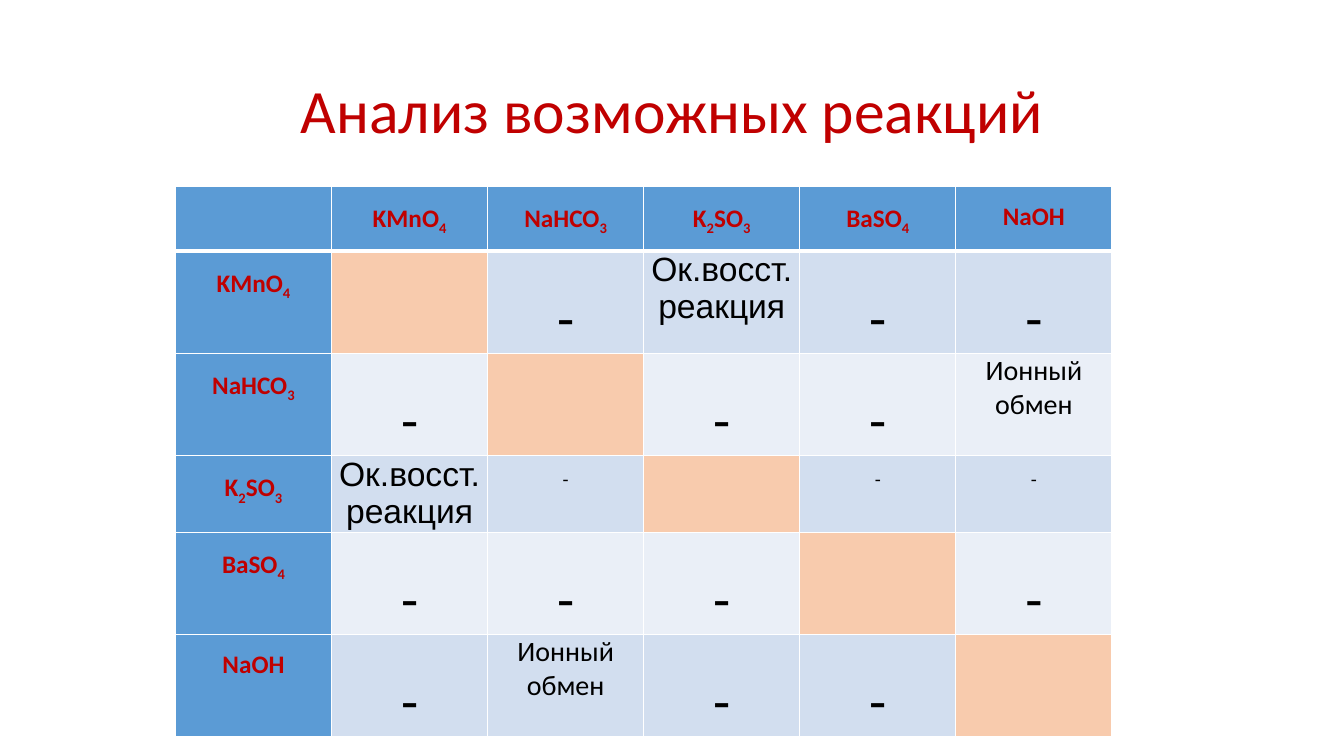
import dataclasses
import itertools

import lxml.etree
import pptx
import pptx.dml.color
import pptx.enum.text
import pptx.oxml.ns
import pptx.util

Inches = pptx.util.Inches
Pt = pptx.util.Pt


@dataclasses.dataclass(frozen=True)
class Theme:
    font: str = "Calibri"
    reaction_font: str = "Arial"
    accent: str = "C00000"
    text: str = "000000"
    header: str = "5B9BD5"
    diagonal: str = "F8CBAD"
    bands: tuple = ("EAEFF7", "D2DEEF")
    border: str = "FFFFFF"
    title_size: int = 44
    label_size: int = 18
    dash_size: int = 40
    small_dash_size: int = 14
    redox_size: int = 24
    exchange_size: int = 20


THEME = Theme()
SUBSTANCES = ["KMnO4", "NaHCO3", "K2SO3", "BaSO4", "NaOH"]
REDOX = {"KMnO4", "K2SO3"}
EXCHANGE = {"NaHCO3", "NaOH"}
ROW_HEIGHTS = [0.64, 0.85, 0.85, 0.76, 0.85, 0.85]


def style_run(r, size, color, font=THEME.font, bold=False):
    r.font.name = font
    r.font.size = Pt(size)
    r.font.bold = bold
    r.font.color.rgb = pptx.dml.color.RGBColor.from_string(color)


def style_paragraph(p, spacing=None):
    p.alignment = pptx.enum.text.PP_ALIGN.CENTER
    p.line_spacing = spacing


def set_borders(cell, row):
    tcPr = cell._tc.get_or_add_tcPr()
    thick = {"T": row == 1, "B": row == 0}
    for side in "LRTB":
        width = Pt(3 if thick.get(side) else 1)
        ln = lxml.etree.SubElement(tcPr, pptx.oxml.ns.qn(f"a:ln{side}"), w=str(width))
        fill = lxml.etree.SubElement(ln, pptx.oxml.ns.qn("a:solidFill"))
        lxml.etree.SubElement(fill, pptx.oxml.ns.qn("a:srgbClr"), val=THEME.border)


def write_formula(cell, formula):
    p = cell.text_frame.paragraphs[0]
    style_paragraph(p, 1.5)
    for is_index, chars in itertools.groupby(formula, str.isdigit):
        r = p.add_run()
        r.text = "".join(chars)
        style_run(r, THEME.label_size, THEME.accent, bold=True)
        if is_index:
            r._r.get_or_add_rPr().set("baseline", "-25000")


def write_reaction(cell, first, second):
    font, spacing = THEME.font, None
    if {first, second} == REDOX:
        text, size, font = "Ок.восст.\nреакция", THEME.redox_size, THEME.reaction_font
    elif {first, second} == EXCHANGE:
        text, size = "Ионный обмен", THEME.exchange_size
    else:
        text, spacing = "-", 1.5
        size = THEME.small_dash_size if first == "K2SO3" else THEME.dash_size
    cell.text_frame.text = text
    for p in cell.text_frame.paragraphs:
        style_paragraph(p, spacing)
        style_run(p.runs[0], size, THEME.text, font)


def fill_cell(cell, row, col):
    set_borders(cell, row)
    cell.margin_left = cell.margin_right = Inches(0.07)
    cell.margin_top = cell.margin_bottom = 0
    if row == 0 or col == 0:
        color = THEME.header
        if row != col:
            write_formula(cell, SUBSTANCES[max(row, col) - 1])
    elif row == col:
        color = THEME.diagonal
    else:
        color = THEME.bands[row % 2]
        write_reaction(cell, SUBSTANCES[row - 1], SUBSTANCES[col - 1])
    cell.fill.solid()
    cell.fill.fore_color.rgb = pptx.dml.color.RGBColor.from_string(color)


def add_title(slide, left, top, width, height):
    sp = slide.shapes.title
    sp.left, sp.top, sp.width, sp.height = map(Inches, (left, top, width, height))
    tf = sp.text_frame
    tf.text = "Анализ возможных реакций"
    tf.vertical_anchor = pptx.enum.text.MSO_ANCHOR.MIDDLE
    p = tf.paragraphs[0]
    style_paragraph(p, 0.9)
    style_run(p.runs[0], THEME.title_size, THEME.accent)


def add_reaction_table(slide, left, top, width, height):
    count = len(SUBSTANCES) + 1
    box = map(Inches, (left, top, width, height))
    table = slide.shapes.add_table(count, count, *box).table
    for row, row_height in enumerate(ROW_HEIGHTS):
        table.rows[row].height = Inches(row_height)
        table.columns[row].width = Inches(width / count)
        for col in range(count):
            fill_cell(table.cell(row, col), row, col)


def main():
    prs = pptx.Presentation()
    prs.slide_width, prs.slide_height = Inches(13.33), Inches(7.5)
    slide = prs.slides.add_slide(prs.slide_layouts[5])
    add_title(slide, 0.92, 0.4, 11.5, 1.45)
    add_reaction_table(slide, 1.74, 1.85, 9.29, sum(ROW_HEIGHTS))
    prs.save("out.pptx")


if __name__ == "__main__":
    main()
